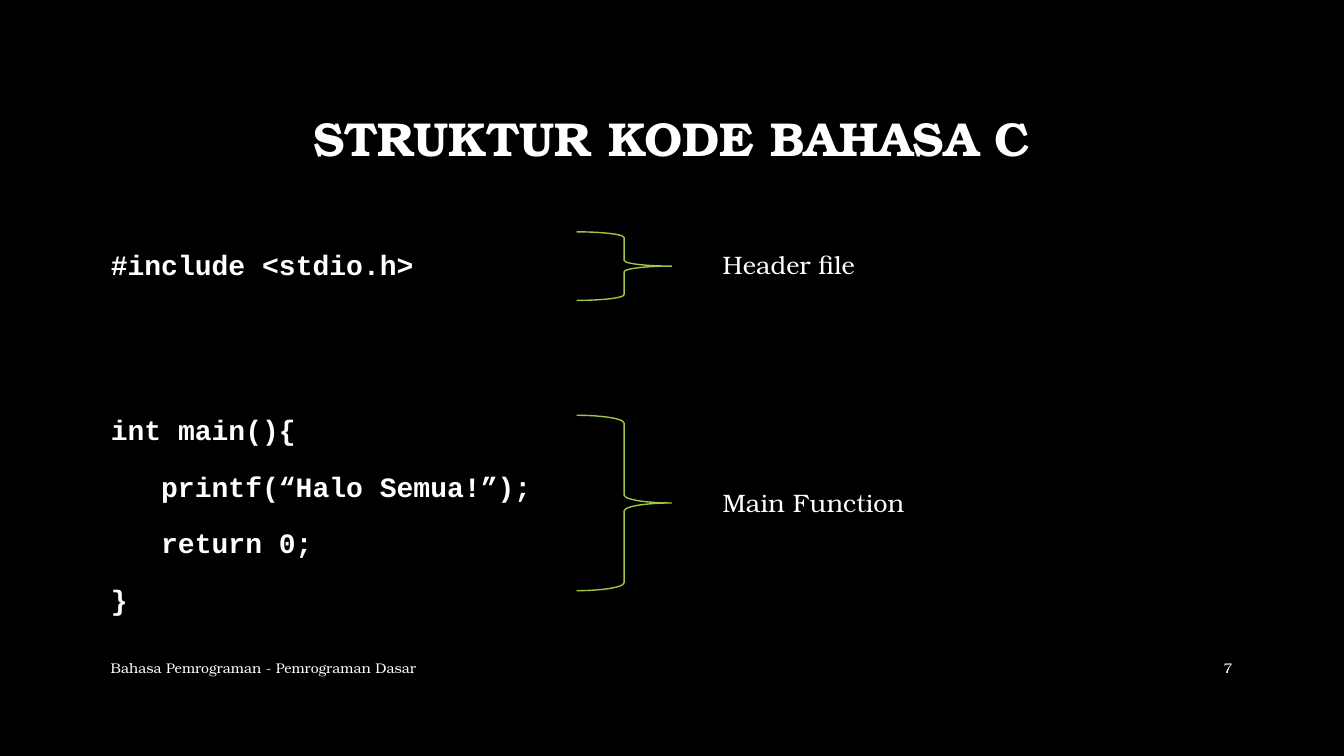
from pptx import Presentation
from pptx.dml.color import RGBColor
from pptx.enum.shapes import MSO_SHAPE
from pptx.enum.text import MSO_ANCHOR, PP_ALIGN
from pptx.util import Emu, Pt

PX = 9144  # EMU, a hundredth of an inch
BRACE = MSO_SHAPE.RIGHT_BRACE
TOP, MIDDLE = MSO_ANCHOR.TOP, MSO_ANCHOR.MIDDLE
LEFT, CENTER, RIGHT = PP_ALIGN.LEFT, PP_ALIGN.CENTER, PP_ALIGN.RIGHT
SERIF, MONO = "TeX Gyre Bonum", "Courier New"
BLACK, WHITE, GREEN = "000000", "FFFFFF", "9EC544"

MARGIN, CONTENT_WIDTH = 100, 1132
CODE_SPACING = 11.6
SECTION_GAP = 89.2
HEADER_LINES = ["#include <stdio.h>"]
MAIN_LINES = ["int main(){", "\tprintf(“Halo Semua!”);", "\treturn 0;", "}"]


def px(length):
    return Emu(length * PX)


def color(hex_string):
    return RGBColor.from_string(hex_string)


def add_text(slide, box, lines, size, font=SERIF, bold=False, align=LEFT, anchor=TOP):
    """Add a text box with one paragraph per line and return its text frame."""
    frame = slide.shapes.add_textbox(*map(px, box)).text_frame
    frame.word_wrap = True
    frame.vertical_anchor = anchor
    frame.text = "\n".join(lines)
    for paragraph in frame.paragraphs:
        paragraph.alignment = align
        for run in paragraph.runs:
            run.font.name = font
            run.font.size = Pt(size)
            run.font.bold = bold
            run.font.color.rgb = color(WHITE)
    return frame


def add_title(slide, box, title):
    frame = add_text(slide, box, [title], 34, bold=True, align=CENTER, anchor=MIDDLE)
    frame.paragraphs[0].line_spacing = 0.9


def add_code(slide, box):
    frame = add_text(slide, box, HEADER_LINES + MAIN_LINES, 20, font=MONO, bold=True)
    frame.margin_top = px(10)
    for index, paragraph in enumerate(frame.paragraphs):
        paragraph.line_spacing = 1.2
        if index:
            starts_main = index == len(HEADER_LINES)
            paragraph.space_before = Pt(SECTION_GAP if starts_main else CODE_SPACING)


def add_annotation(slide, box, label, label_top):
    """Fill the box with a brace and put its label to the right."""
    left, top, width, height = box
    brace = slide.shapes.add_shape(BRACE, *map(px, box))
    brace.shadow.inherit = False
    brace.fill.background()
    brace.line.color.rgb = color(GREEN)
    brace.line.width = Pt(1)
    add_text(slide, (left + width + 41, top + label_top, 220, 40), [label], 18)


def add_footer(slide, box, course, number):
    left, top, width, height = box
    number_width = 82
    add_text(slide, (left, top, 730, height), [course], 10, anchor=MIDDLE)
    add_text(slide, (left + width - number_width, top, number_width, height),
             [number], 10, align=RIGHT, anchor=MIDDLE)


def main():
    deck = Presentation()
    deck.slide_width, deck.slide_height = px(1333), px(750)
    slide = deck.slides.add_slide(deck.slide_layouts[6])
    slide.background.fill.solid()
    slide.background.fill.fore_color.rgb = color(BLACK)

    add_title(slide, (MARGIN, 67, CONTENT_WIDTH, 145), "STRUKTUR KODE BAHASA C")
    add_code(slide, (MARGIN, 229, 515, 404))
    add_annotation(slide, (572, 230, 94, 68), "Header file", 12)
    add_annotation(slide, (572, 412, 94, 174), "Main Function", 67)
    add_footer(slide, (MARGIN, 643, CONTENT_WIDTH, 40),
               "Bahasa Pemrograman - Pemrograman Dasar", "7")
    deck.save("out.pptx")


if __name__ == "__main__":
    main()
